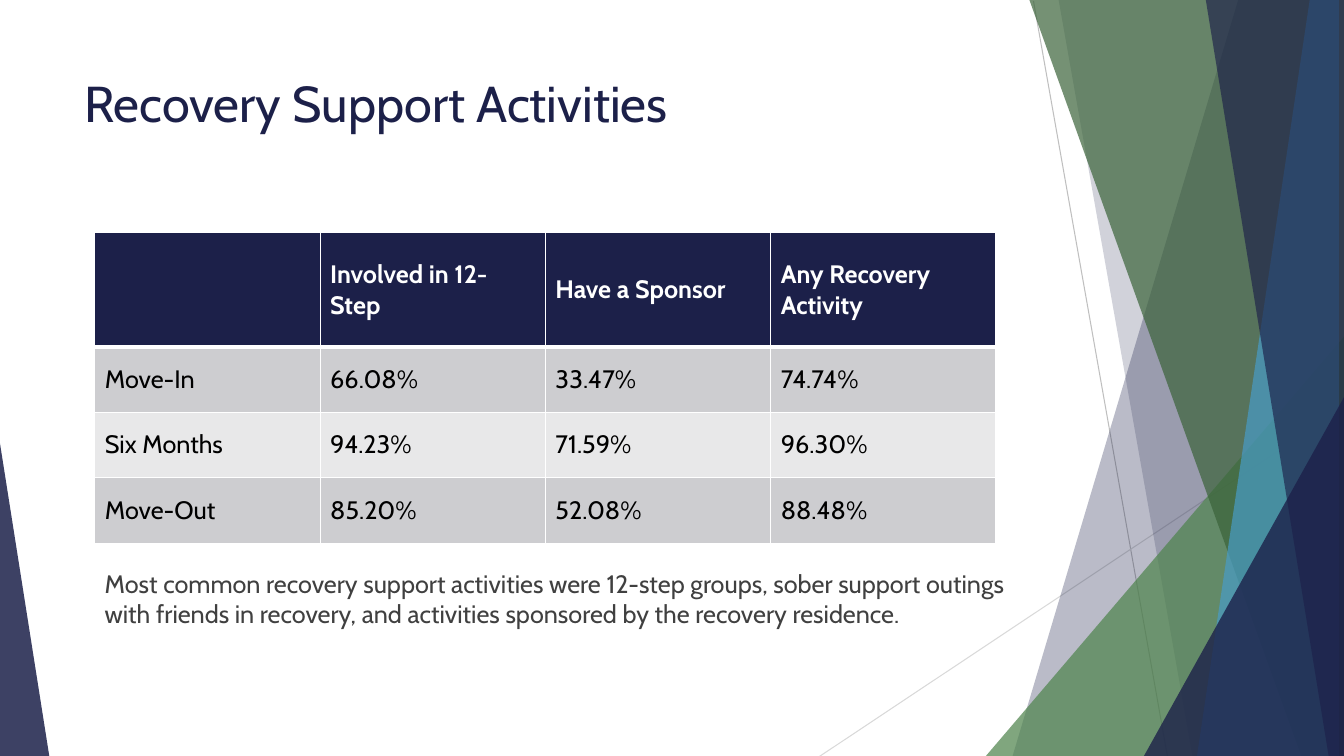
"""Build the recovery support activities slide."""
from lxml.etree import SubElement as Sub
from pptx import Presentation
from pptx.dml.color import RGBColor
from pptx.enum.shapes import MSO_CONNECTOR as Link, MSO_SHAPE as Shape
from pptx.enum.text import MSO_ANCHOR as Anchor
from pptx.oxml.ns import qn
from pptx.util import Inches, Pt

NAVY = RGBColor(0x1C, 0x20, 0x49)
GREEN = RGBColor(0x4F, 0x84, 0x4D)
FOREST = RGBColor(0x3B, 0x63, 0x3A)
SKY = RGBColor(0x48, 0x9C, 0xC7)
WHITE = RGBColor(0xFF, 0xFF, 0xFF)
BLACK = RGBColor(0, 0, 0)
TEXT = RGBColor(0x40, 0x40, 0x40)
SILVER = RGBColor(0xBF, 0xBF, 0xBF)
PALE = RGBColor(0xD9, 0xD9, 0xD9)
BANDS = [RGBColor(0xE8, 0xE8, 0xE9), RGBColor(0xCD, 0xCD, 0xD0)]

FONT = "Cabin"
WIDE, HIGH = 13.33, 7.5
BASE = 7.51
ROWS = [
    ["", "Involved in 12-Step", "Have a Sponsor", "Any Recovery Activity"],
    ["Move-In", "66.08%", "33.47%", "74.74%"],
    ["Six Months", "94.23%", "71.59%", "96.30%"],
    ["Move-Out", "85.20%", "52.08%", "88.48%"],
]
NOTE = (
    "Most common recovery support activities were 12-step groups, sober support "
    "outings with friends in recovery, and activities sponsored by the recovery residence."
)


def tint(shape, color, alpha):
    """Give a shape a see-through fill and no outline."""
    shape.shadow.inherit = False
    shape.fill.solid()
    shape.fill.fore_color.rgb = color
    shape.line.fill.background()
    tone = shape._element.spPr.find(".//" + qn("a:srgbClr"))
    Sub(tone, qn("a:alpha"), val=str(alpha * 1000))


def add_line(slide, start, end, color):
    """Draw a thin straight line."""
    ends = [Inches(n) for n in (*start, *end)]
    line = slide.shapes.add_connector(Link.STRAIGHT, *ends)
    line.line.color.rgb = color
    line.line.width = Pt(0.75)
    Sub(line._element.spPr, qn("a:effectLst"))


def add_band(slide, top, base, color, alpha):
    """Draw a slanted band from its top edge to its base edge."""
    left, right = top
    low, far = base
    spots = [(right, 0), (far, BASE), (low, BASE)]
    pen = slide.shapes.build_freeform(Inches(left), Inches(0))
    pen.add_line_segments([(Inches(x), Inches(y)) for x, y in spots], close=True)
    tint(pen.convert_to_shape(), color, alpha)


def add_wedge(slide, left, top, width, tip, color, alpha):
    """Draw a right triangle that stands on the slide base."""
    box = [Inches(n) for n in (left, top, width, BASE - top)]
    wedge = slide.shapes.add_shape(Shape.ISOSCELES_TRIANGLE, *box)
    wedge.adjustments[0] = tip
    tint(wedge, color, alpha)


def add_run(para, text, size, color, bold=False):
    """Append one styled run."""
    run = para.add_run()
    run.text = text
    font = run.font
    font.name, font.size, font.bold = FONT, Pt(size), bold
    font.color.rgb = color


def add_text(slide, box, text, size, color, space=0):
    """Place a wrapped block of text."""
    frame = slide.shapes.add_textbox(*[Inches(n) for n in box]).text_frame
    frame.word_wrap = True
    para = frame.paragraphs[0]
    para.space_before = Pt(space)
    add_run(para, text, size, color)


def add_edge(cell, side, width):
    """Set one white border of a cell."""
    props = cell._tc.get_or_add_tcPr()
    edge = Sub(props, qn("a:ln" + side), w=str(Pt(width)))
    Sub(Sub(edge, qn("a:solidFill")), qn("a:srgbClr"), val=str(WHITE))


def fill_cell(cell, text, row):
    """Style one table cell and write its text."""
    head = row == 0
    widths = {"L": 1, "R": 1, "T": 3 if row == 1 else 1, "B": 3 if head else 1}
    for side, width in widths.items():
        add_edge(cell, side, width)
    cell.fill.solid()
    cell.fill.fore_color.rgb = NAVY if head else BANDS[row % 2]
    cell.vertical_anchor = Anchor.MIDDLE
    if text:
        add_run(cell.text_frame.paragraphs[0], text, 18, WHITE if head else BLACK, head)


def add_grid(slide):
    """Add the table of activity rates."""
    box = [Inches(n) for n in (0.94, 2.31, 8.94, 3.08)]
    grid = slide.shapes.add_table(len(ROWS), len(ROWS[0]), *box).table
    for col in grid.columns:
        col.width = Inches(8.94 / len(ROWS[0]))
    for row, texts in enumerate(ROWS):
        grid.rows[row].height = Inches(0.65 if row else 1.13)
        for col, text in enumerate(texts):
            fill_cell(grid.cell(row, col), text, row)


def add_decor(slide):
    """Draw the lines, bands and wedges behind the content."""
    add_line(slide, (10.25, 0.01), (11.58, BASE), SILVER)
    add_line(slide, (WIDE, 4.04), (8.12, BASE), PALE)
    add_band(slide, (12.28, WIDE), (10.04, WIDE), NAVY, 30)
    add_band(slide, (10.5, WIDE), (11.83, WIDE), NAVY, 20)
    add_wedge(slide, 9.77, 3.34, 3.56, 1, GREEN, 72)
    add_band(slide, (10.21, WIDE), (12.91, WIDE), FOREST, 70)
    add_band(slide, (12.99, 13.28), (11.87, 13.28), SKY, 70)
    add_band(slide, (11.96, WIDE), (13.18, WIDE), NAVY, 65)
    add_wedge(slide, 11.34, 3.94, 1.99, 1, NAVY, 80)
    add_wedge(slide, 0, 4.4, 0.49, 0, NAVY, 85)


def main():
    """Build and save the slide."""
    deck = Presentation()
    deck.slide_width, deck.slide_height = Inches(WIDE), Inches(HIGH)
    slide = deck.slides.add_slide(deck.slide_layouts[6])
    add_decor(slide)
    add_text(slide, (0.74, 0.67, 9.4, 1.44), "Recovery Support Activities", 36, NAVY)
    add_text(slide, (0.94, 5.59, 9.4, 1.16), NOTE, 18, TEXT, 10)
    add_grid(slide)
    deck.save("out.pptx")


if __name__ == "__main__":
    main()
